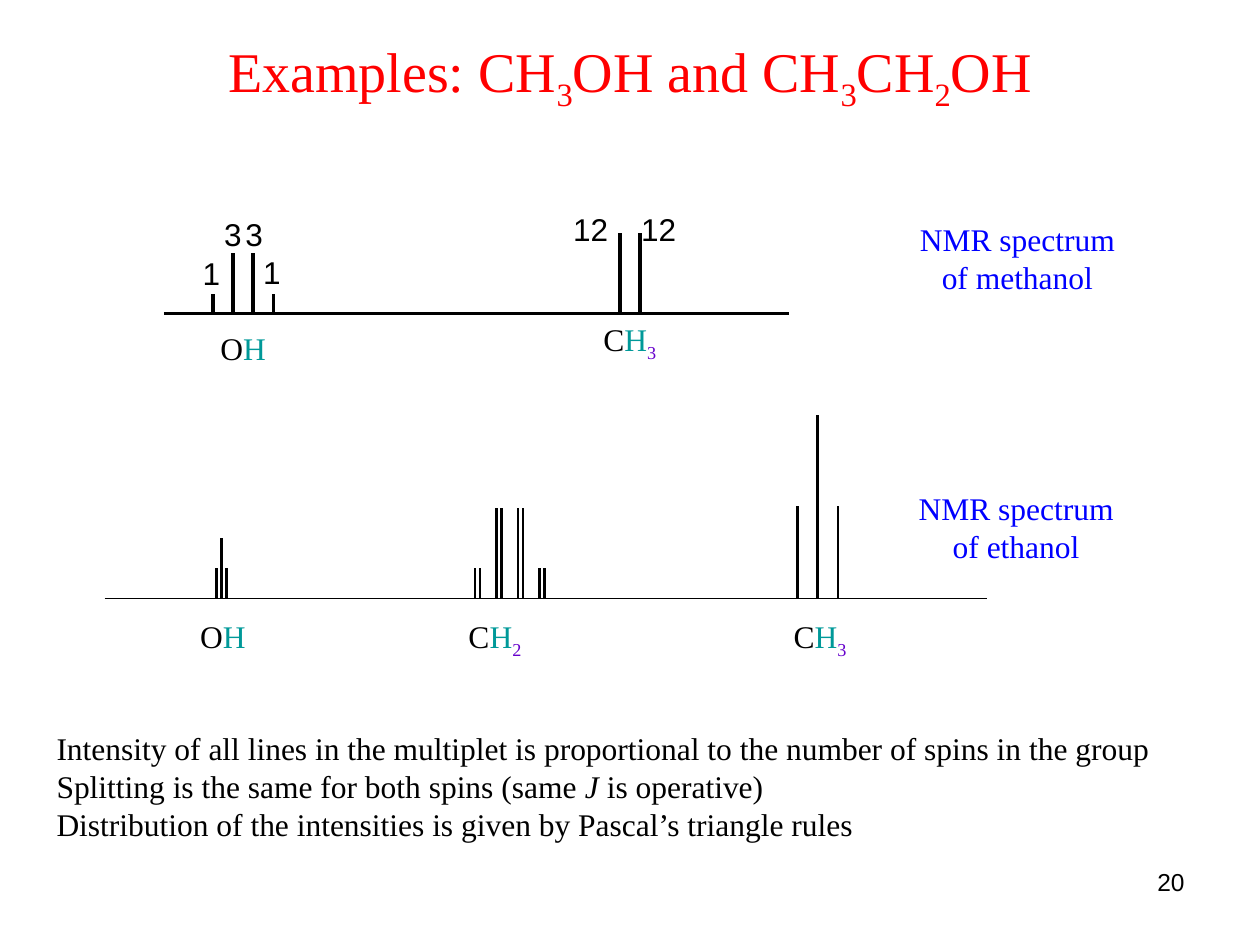
import pptx
import pptx.dml.color
import pptx.enum.shapes
import pptx.enum.text
import pptx.oxml.ns
import pptx.util
from lxml import etree
from pptx.util import Inches

SERIF, SANS = "Times New Roman", "Arial"
BLACK, RED, BLUE, TEAL, PURPLE = "000000", "FF0000", "0000FF", "009999", "6600CC"
LEFT = pptx.enum.text.PP_ALIGN.LEFT
CENTER = pptx.enum.text.PP_ALIGN.CENTER
RIGHT = pptx.enum.text.PP_ALIGN.RIGHT

OH = [("O", BLACK), ("H", TEAL)]
CH2 = [("C", BLACK), ("H", TEAL), ("_2", PURPLE)]
CH3 = [("C", BLACK), ("H", TEAL), ("_3", PURPLE)]


def rgb(color):
    return pptx.dml.color.RGBColor.from_string(color)


def format_paragraph(p, size, font, color, align):
    p.alignment = align
    p.font.size = pptx.util.Pt(size)
    p.font.name = font
    p.font.color.rgb = rgb(color)


def add_run(p, text, color=None, italic=False):
    """Add a run; a leading underscore makes it a subscript."""
    r = p.add_run()
    r.text = text.lstrip("_")
    if text.startswith("_"):
        r.font._element.set("baseline", "-25000")
    if color:
        r.font.color.rgb = rgb(color)
    if italic:
        r.font.italic = True


def add_text(s, x, y, w, h, lines, size=18, font=SERIF, color=BLACK,
             align=LEFT, wrap=False):
    """Add a text box; each line is a list of argument tuples for add_run."""
    tf = s.shapes.add_textbox(Inches(x), Inches(y), Inches(w), Inches(h)).text_frame
    tf.word_wrap = wrap
    for i, runs in enumerate(lines):
        p = tf.add_paragraph() if i else tf.paragraphs[0]
        format_paragraph(p, size, font, color, align)
        for run in runs:
            add_run(p, *run)


def add_line(s, x1, y1, x2, y2, width):
    line = s.shapes.add_connector(
        pptx.enum.shapes.MSO_CONNECTOR.STRAIGHT,
        Inches(x1), Inches(y1), Inches(x2), Inches(y2))
    line.line.color.rgb = rgb(BLACK)
    line.line.width = pptx.util.Pt(width)
    etree.SubElement(line._element.spPr, pptx.oxml.ns.qn("a:effectLst"))


def add_multiplet(s, x, base, gap, intensities, unit, width):
    """Draw evenly spaced peaks, each a stack of unit-high lines."""
    for i, intensity in enumerate(intensities):
        peak = x + i * gap
        for level in range(intensity):
            y = base - level * unit
            add_line(s, peak, y, peak, y - unit, width)


def add_caption(s, x, y, compound):
    lines = [[("NMR spectrum",)], [(f"of {compound}",)]]
    add_text(s, x, y, 1.77, 0.71, lines, color=BLUE, align=CENTER)


def add_title(s, x, y, w, h):
    title = s.shapes.title
    title.left, title.top, title.width, title.height = map(Inches, (x, y, w, h))
    title.text_frame.vertical_anchor = pptx.enum.text.MSO_ANCHOR.MIDDLE
    p = title.text_frame.paragraphs[0]
    format_paragraph(p, 32, SERIF, RED, CENTER)
    for text in ("Examples: CH", "_3", "OH and CH", "_3", "CH", "_2", "OH"):
        add_run(p, text)


def add_methanol(s, x, y, w, h):
    base = y + h
    add_line(s, x, base, x + w, base, 2)
    for dx, peaks in ((0.39, (1, 3, 3, 1)), (3.62, (4, 4))):
        add_multiplet(s, x + dx, base, 0.16, peaks, 0.16, 2)
    intensity_labels = (
        ("1", 0.21, 0.35, 0.34), ("1", 0.69, 0.34, 0.34),
        ("3", 0.38, 0.04, 0.34), ("3", 0.55, 0.04, 0.34),
        ("12", 3.15, 0, 0.48), ("12", 3.69, 0, 0.48))
    for text, dx, dy, width in intensity_labels:
        add_text(s, x + dx, y + dy, width, 0.4, [[(text,)]], font=SANS)
    add_text(s, x + 0.35, base + 0.07, 0.57, 0.4, [OH])
    add_text(s, x + 3.39, base, 0.64, 0.4, [CH3])
    add_caption(s, x + 5.89, y + 0.08, "methanol")


def add_ethanol(s, x, y, w, h):
    base = y + h
    add_line(s, x, base, x + w, base, 1)
    multiplets = (
        (0.89, 0.04, (1, 2, 1), 0.24),
        (2.94, 0.17, (1, 3, 3, 1), 0.24),
        (2.98, 0.17, (1, 3, 3, 1), 0.24),
        (5.5, 0.16, (1, 2, 1), 0.73))
    for dx, gap, peaks, unit in multiplets:
        add_multiplet(s, x + dx, base, gap, peaks, unit, 1.5)
    for group, dx, width in ((OH, 0.66, 0.57), (CH2, 2.79, 0.64), (CH3, 5.37, 0.64)):
        add_text(s, x + dx, base + 0.1, width, 0.4, [group])
    add_caption(s, x + 6.35, y + 0.54, "ethanol")


def add_notes_on_intensity(s, x, y, w, h):
    add_text(s, x, y, w, h, [
        [("Intensity of all lines in the multiplet is proportional to the "
          "number of spins in the group",)],
        [("Splitting is the same for both spins (same ",),
         ("J", None, True), (" is operative)",)],
        [("Distribution of the intensities is given by Pascal’s triangle rules",)],
    ], wrap=True)


def main():
    prs = pptx.Presentation()
    prs.slide_width, prs.slide_height = Inches(10), Inches(7.5)
    s = prs.slides.add_slide(prs.slide_layouts.get_by_name("Title Only"))
    add_title(s, 0.5, -0.03, 9, 1.25)
    add_methanol(s, 1.3, 1.62, 4.96, 0.87)
    add_ethanol(s, 0.83, 3.29, 7, 1.46)
    add_notes_on_intensity(s, 0.35, 5.74, 9.29, 1.01)
    add_text(s, 7.17, 6.83, 2.33, 0.52, [[("20",)]], size=14, font=SANS,
             align=RIGHT, wrap=True)
    prs.save("out.pptx")


if __name__ == "__main__":
    main()
